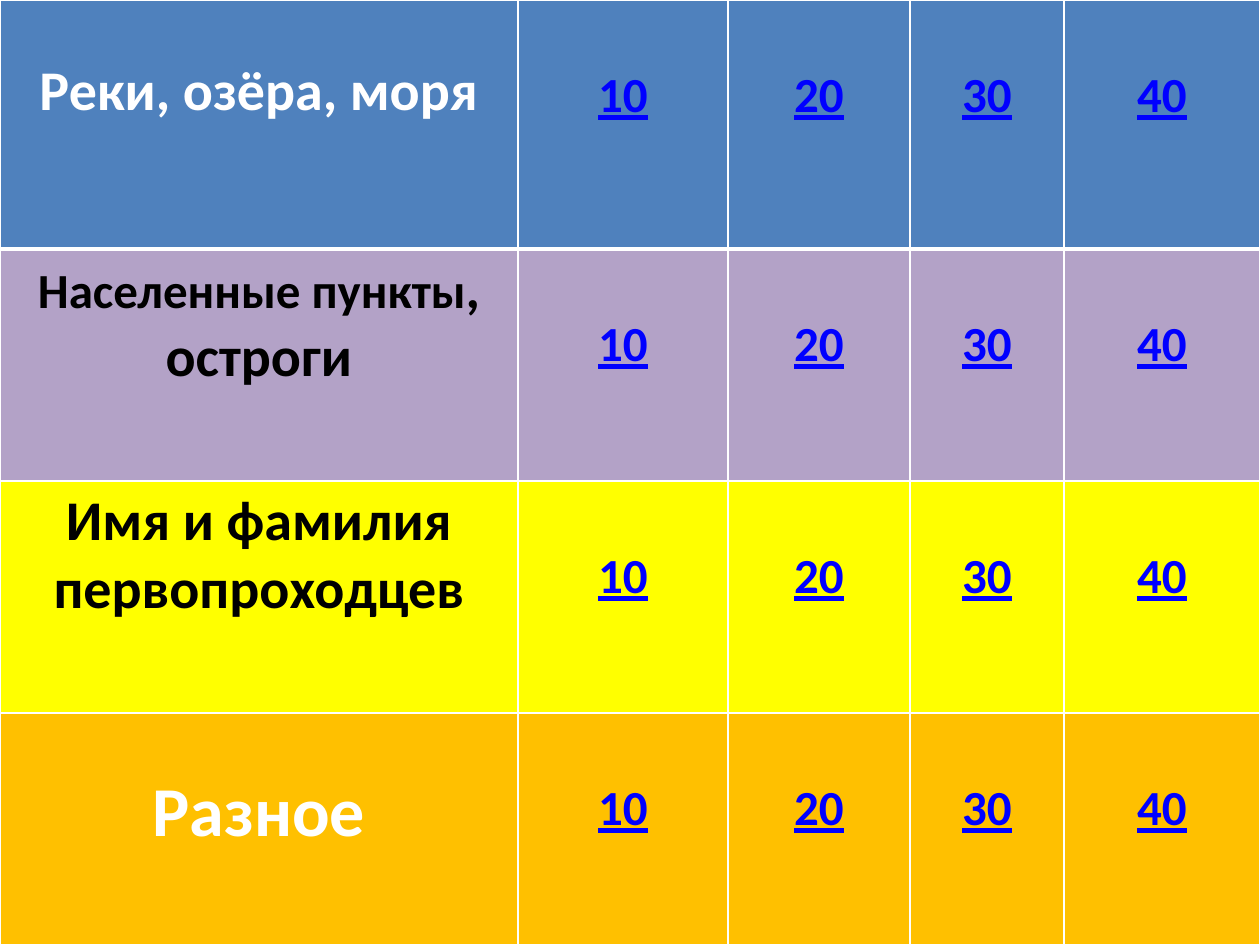
from dataclasses import dataclass

from lxml import etree
from pptx import Presentation
from pptx import util as u
from pptx.dml.color import RGBColor
from pptx.enum import text
from pptx.oxml import ns

SCALE = 914400 / 126  # EMU in one px
COLS = [518, 210, 182, 154, 196]
ROWS = [249, 232, 232, 232]
POINTS = ["10", "20", "30", "40"]
PAD = 6
POINTS_TOP = 66


@dataclass
class Category:
    runs: list[tuple[str, int]]  # wording and size in points
    fill: str
    color: str
    top: int = PAD


CATEGORIES = [
    Category([("Реки, озёра, моря", 32)], "4F81BD", "FFFFFF", 57),
    Category([("Населенные пункты", 28), (", остроги", 32)], "B3A2C7", "000000"),
    Category([("Имя и фамилия первопроходцев", 32)], "FFFF00", "000000"),
    Category([("Разное", 40)], "FFC000", "FFFFFF", 57),
]


def px(n: int) -> u.Emu:
    return u.Emu(round(n * SCALE))


def rgb(value: str) -> RGBColor:
    return RGBColor.from_string(value)


def add_text(p, content: str, *, size: int, color: str, underline: bool = False) -> None:
    r = p.add_run()
    r.text = content
    f = r.font
    f.name, f.size, f.bold, f.underline = "Calibri", u.Pt(size), True, underline
    f.color.rgb = rgb(color)


def set_borders(cell, widths: dict[str, int]) -> None:
    """Draw white cell borders, which come before the fill."""
    tc_pr = cell._tc.get_or_add_tcPr()
    for i, (side, width) in enumerate(widths.items()):
        ln = etree.Element(ns.qn(f"a:ln{side}"), w=str(u.Pt(width)))
        fill = etree.SubElement(ln, ns.qn("a:solidFill"))
        etree.SubElement(fill, ns.qn("a:srgbClr"), val="FFFFFF")
        tc_pr.insert(i, ln)


def format_cell(cell, fill: str, top: int, row: int):
    """Style one cell and return its centred paragraph."""
    cell.fill.solid()
    cell.fill.fore_color.rgb = rgb(fill)
    cell.margin_top = px(top)
    cell.vertical_anchor = text.MSO_ANCHOR.TOP
    # A thick rule parts the first row from the rest
    set_borders(cell, {"L": 1, "R": 1, "T": 3 if row == 1 else 1, "B": 3 if row == 0 else 1})
    p = cell.text_frame.paragraphs[0]
    p.alignment = text.PP_ALIGN.CENTER
    return p


def main() -> None:
    prs = Presentation()
    prs.slide_width, prs.slide_height = u.Inches(10), u.Inches(7.5)
    s = prs.slides.add_slide(prs.slide_layouts[6])

    # Game board
    table = s.shapes.add_table(len(ROWS), len(COLS), 0, 0, px(sum(COLS)), px(sum(ROWS))).table
    table.first_row = table.horz_banding = False
    for column, width in zip(table.columns, COLS):
        column.width = px(width)
    for row, height in zip(table.rows, ROWS):
        row.height = px(height)

    # Category name, then its point values
    for i, category in enumerate(CATEGORIES):
        p = format_cell(table.cell(i, 0), category.fill, category.top, i)
        for content, size in category.runs:
            add_text(p, content, size=size, color=category.color)
        for j, value in enumerate(POINTS, start=1):
            p = format_cell(table.cell(i, j), category.fill, POINTS_TOP, i)
            add_text(p, value, size=28, color="0000FF", underline=True)

    prs.save("out.pptx")


if __name__ == "__main__":
    main()
